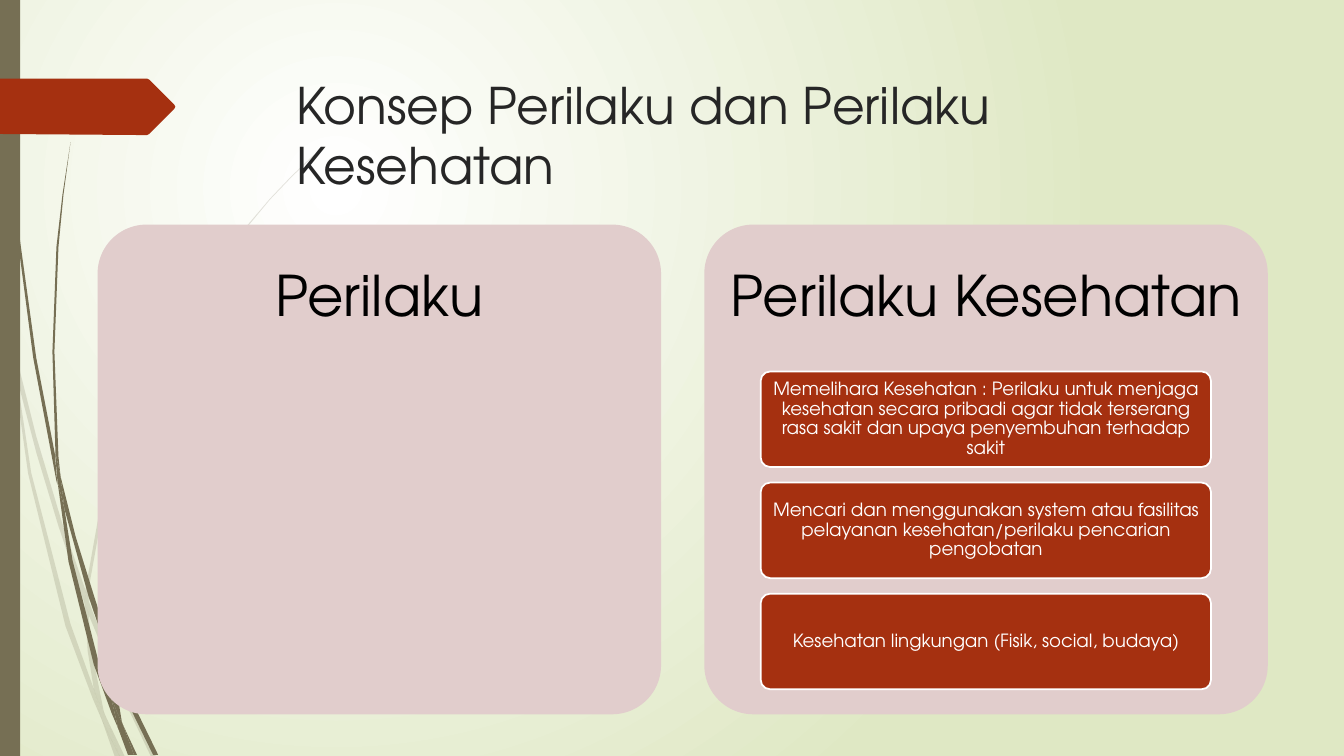
from lxml import etree
from pptx import Presentation
from pptx import util as u
from pptx.dml.color import RGBColor
from pptx.enum import shapes, text
from pptx.oxml.ns import qn

COLORS = {
    "white": "FFFFFF", "black": "000000", "ink": "262626", "edge": "DFE8C4",
    "olive": "766F54", "rust": "A53010", "card": "E1CDCC",
}

PALE_BLADES = [
    [(11, 350), (9, 322), (0, 282), (0, 299), (10, 344)],
    [(58, 522), (84, 599), (85, 586), (62, 520), (36, 433), (14, 345), (17, 376), (36, 449)],
    [(92, 607), (88, 596), (88, 610), (123, 694), (150, 751), (155, 751), (127, 692)],
    [(119, 751), (124, 751), (105, 711)],
    [(93, 683), (70, 619), (31, 469), (17, 376), (11, 350), (28, 470), (65, 621),
     (92, 693), (101, 714), (99, 707)],
    [(84, 599), (87, 646), (93, 683), (96, 692), (105, 711), (103, 706), (91, 646),
     (88, 610), (88, 608)],
    [(88, 584), (110, 462), (160, 349), (229, 245), (268, 198), (290, 175), (312, 154),
     (312, 153), (289, 175), (268, 197), (228, 244), (158, 348), (107, 461), (85, 584),
     (85, 586), (88, 596)],
    [(101, 714), (114, 751), (119, 751)],
    [(88, 608), (88, 610), (88, 596), (85, 586), (84, 599)],
    [(96, 692), (93, 683), (99, 707), (101, 714), (119, 751), (105, 711)],
]
DARK_BLADES = [
    [(7, 110), (17, 233), (33, 355), (56, 477), (57, 481), (55, 457), (55, 453), (36, 355),
     (19, 232), (8, 109), (5, 48), (4, 0), (3, 0), (4, 48)],
    [(88, 592), (106, 645), (106, 633), (106, 631), (93, 590), (75, 532), (60, 472), (64, 505)],
    [(113, 649), (110, 641), (111, 656), (132, 708), (152, 749), (157, 749), (136, 706)],
    [(110, 691), (98, 657), (72, 556), (64, 505), (57, 477), (68, 557), (93, 659),
     (111, 708), (117, 722), (116, 717)],
    [(60, 472), (58, 453), (54, 349), (58, 245), (63, 193), (70, 141), (62, 193),
     (56, 245), (52, 349), (55, 449)],
    [(133, 749), (136, 749), (122, 719)],
    [(57, 477), (64, 505), (60, 472), (55, 449), (55, 453)],
    [(117, 722), (127, 749), (131, 749)],
    [(106, 645), (110, 691), (116, 706), (122, 719), (121, 716), (111, 656), (109, 651)],
    [(116, 706), (110, 691), (116, 717), (117, 722), (130, 749), (133, 749), (122, 719)],
]
ARROW = [(0, 78), (146, 78), (148, 79), (173, 104), (174, 106), (173, 108), (148, 133),
         (146, 134), (136, 134), (0, 133)]

BEHAVIOURS = [
    "Memelihara Kesehatan : Perilaku untuk menjaga kesehatan secara pribadi agar tidak "
    "terserang rasa sakit dan upaya penyembuhan terhadap sakit",
    "Mencari dan menggunakan system atau fasilitas pelayanan kesehatan/perilaku "
    "pencarian pengobatan",
    "Kesehatan lingkungan (Fisik, social, budaya)",
]


class Deck:
    font = "TeX Gyre Adventor"
    unit = u.Cm(0.0254)

    def __init__(self):
        self.prs = Presentation()
        self.prs.slide_width = u.Cm(33.87)
        self.prs.slide_height = u.Cm(19.05)
        self.slide = self.prs.slides.add_slide(self.prs.slide_layouts[5])

    def rgb(self, name):
        return RGBColor.from_string(COLORS[name])

    def background(self, inner, outer):
        fill = self.slide.background.fill
        fill.gradient()
        for stop, color in zip(fill.gradient_stops, (inner, outer)):
            stop.color.rgb = self.rgb(color)
        grad = self.slide.element.find(".//" + qn("a:gradFill"))
        grad.remove(grad.find(qn("a:lin")))
        circle = etree.SubElement(grad, qn("a:path"), path="circle")
        etree.SubElement(circle, qn("a:fillToRect"), l="50000", t="50000", r="100000", b="100000")

    def paint(self, sp, color, line=None, alpha=None):
        sp.shadow.inherit = False
        sp.fill.solid()
        sp.fill.fore_color.rgb = self.rgb(color)
        if alpha:
            clr = sp.element.spPr.find(qn("a:solidFill"))[0]
            etree.SubElement(clr, qn("a:alpha"), val=str(alpha * 1000))
        if line:
            sp.line.color.rgb = self.rgb(line)
            sp.line.width = u.Pt(1.25)
        else:
            sp.line.fill.background()

    def outline(self, points, color, alpha=None):
        builder = self.slide.shapes.build_freeform(*points[0], scale=self.unit)
        builder.add_line_segments(points[1:])
        self.paint(builder.convert_to_shape(), color, alpha=alpha)

    def box(self, left, top, width, height, color, line=None, rounded=True):
        kind = shapes.MSO_SHAPE.ROUNDED_RECTANGLE if rounded else shapes.MSO_SHAPE.RECTANGLE
        sp = self.slide.shapes.add_shape(kind, *map(u.Cm, (left, top, width, height)))
        if rounded:
            sp.adjustments[0] = 0.1
        self.paint(sp, color, line)
        return sp

    def label(self, sp, words, size, color, inset=0.17, spacing=0.9):
        tf = sp.text_frame
        tf.word_wrap = True
        tf.auto_size = text.MSO_AUTO_SIZE.NONE
        tf.vertical_anchor = text.MSO_ANCHOR.MIDDLE
        tf.margin_left = tf.margin_right = tf.margin_top = tf.margin_bottom = u.Cm(inset)
        p = tf.paragraphs[0]
        p.alignment = text.PP_ALIGN.CENTER
        p.line_spacing = spacing
        r = p.add_run()
        r.text = words
        r.font.size = u.Pt(size)
        r.font.name = self.font
        r.font.color.rgb = self.rgb(color)
        return tf

    def title(self, words, left, top, width, height):
        sp = self.slide.shapes.title
        sp.element.getparent().append(sp.element)
        sp.left, sp.top, sp.width, sp.height = map(u.Cm, (left, top, width, height))
        tf = self.label(sp, words, 36, "ink", spacing=1.0)
        tf.vertical_anchor = text.MSO_ANCHOR.TOP
        tf.margin_left = tf.margin_right = u.Cm(0.25)
        tf.margin_top = tf.margin_bottom = u.Cm(0.13)
        tf.paragraphs[0].alignment = text.PP_ALIGN.LEFT

    def heading(self, words, left, top, width, height):
        sp = self.slide.shapes.add_textbox(*map(u.Cm, (left, top, width, height)))
        self.label(sp, words, 40, "black", inset=0.43)


def main():
    deck = Deck()
    deck.background("white", "edge")
    for blade in PALE_BLADES:
        deck.outline(blade, "olive", alpha=20)
    for blade in DARK_BLADES:
        deck.outline(blade, "olive")
    deck.box(0, 0, 0.51, 19.05, "olive", rounded=False)
    deck.outline(ARROW, "rust")
    deck.title("Konsep Perilaku dan Perilaku Kesehatan", 7.21, 1.73, 24.77, 3.56)

    for col, name in enumerate(["Perilaku", "Perilaku Kesehatan"]):
        left = 2.46 + 15.29 * col
        deck.box(left, 5.66, 14.2, 12.34, "card")
        deck.heading(name, left, 5.66, 14.2, 3.7)

    for row, behaviour in enumerate(BEHAVIOURS):
        sp = deck.box(19.17, 9.36 + 2.8 * row, 11.35, 2.41, "rust", line="white")
        deck.label(sp, behaviour, 13, "white")

    deck.prs.save("out.pptx")


if __name__ == "__main__":
    main()
